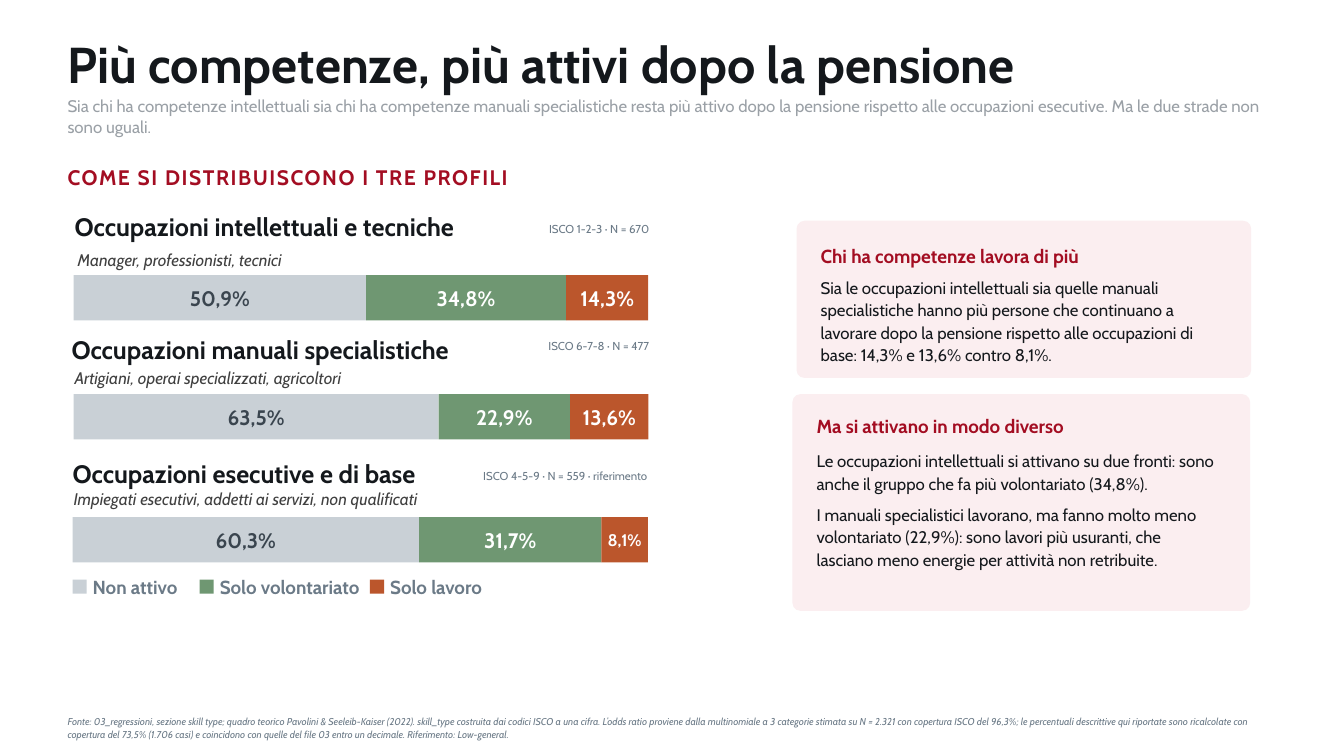
from dataclasses import dataclass
from itertools import accumulate

from pptx import Presentation
from pptx.dml.color import RGBColor
from pptx.enum.shapes import MSO_SHAPE
from pptx.enum.text import MSO_ANCHOR, MSO_AUTO_SIZE, PP_ALIGN
from pptx.util import Inches, Pt

TITLE = "Più competenze, più attivi dopo la pensione"
SUBTITLE = (
    "Sia chi ha competenze intellettuali sia chi ha competenze manuali specialistiche resta più attivo "
    "dopo la pensione rispetto alle occupazioni esecutive. Ma le due strade non sono uguali."
)
SECTION = "COME SI DISTRIBUISCONO I TRE PROFILI"
SOURCE = (
    "Fonte: 03_regressioni, sezione skill type; quadro teorico Pavolini & Seeleib-Kaiser (2022). "
    "skill_type costruita dai codici ISCO a una cifra. L’odds ratio proviene dalla multinomiale a 3 "
    "categorie stimata su N = 2.321 con copertura ISCO del 96,3%; le percentuali descrittive qui riportate "
    "sono ricalcolate con copertura del 73,5% (1.706 casi) e coincidono con quelle del file 03 entro un "
    "decimale. Riferimento: Low-general."
)
PROFILES = [
    {"name": "Occupazioni intellettuali e tecniche", "name_at": (0.74, 2.14),
     "sample": "ISCO 1-2-3 · N = 670", "sample_at": (3.29, 2.17),
     "jobs": "Manager, professionisti, tecnici", "jobs_at": (0.77, 2.49),
     "shares": (50.9, 34.8, 14.3), "bar_at": (0.73, 2.73)},
    {"name": "Occupazioni manuali specialistiche", "name_at": (0.71, 3.36),
     "sample": "ISCO 6-7-8 · N = 477", "sample_at": (3.29, 3.33),
     "jobs": "Artigiani, operai specializzati, agricoltori", "jobs_at": (0.74, 3.66),
     "shares": (63.5, 22.9, 13.6), "bar_at": (0.73, 3.91)},
    {"name": "Occupazioni esecutive e di base", "name_at": (0.72, 4.59),
     "sample": "ISCO 4-5-9 · N = 559 · riferimento", "sample_at": (3.27, 4.62),
     "jobs": "Impiegati esecutivi, addetti ai servizi, non qualificati", "jobs_at": (0.73, 4.86),
     "shares": (60.3, 31.7, 8.1), "bar_at": (0.72, 5.13)},
]
LEGEND = [("Non attivo", 0.72), ("Solo volontariato", 1.98), ("Solo lavoro", 3.67)]
FINDINGS = [
    {"heading": "Chi ha competenze lavora di più", "card": (7.9, 2.19, 4.51, 1.56),
     "heading_box": (8.14, 2.36, 3.94, 0.36), "body_box": (8.14, 2.73, 3.94, 0.76),
     "body": ["Sia le occupazioni intellettuali sia quelle manuali specialistiche hanno più persone che "
              "continuano a lavorare dopo la pensione rispetto alle occupazioni di base: 14,3% e 13,6% "
              "contro 8,1%."]},
    {"heading": "Ma si attivano in modo diverso", "card": (7.86, 3.91, 4.54, 2.15),
     "heading_box": (8.1, 4.07, 3.97, 0.32), "body_box": (8.1, 4.45, 3.97, 1.44),
     "body": ["Le occupazioni intellettuali si attivano su due fronti: sono anche il gruppo che fa più "
              "volontariato (34,8%).",
              "I manuali specialistici lavorano, ma fanno molto meno volontariato (22,9%): sono lavori più "
              "usuranti, che lasciano meno energie per attività non retribuite."]},
]
BAR_WIDTH, BAR_HEIGHT, NARROW_SHARE = 5.7, 0.45, 10
CARD_RADIUS = 0.08


@dataclass(frozen=True)
class Theme:
    """Typeface, colours and type sizes of the slide."""
    font: str = "Cabin"
    ink: str = "14181C"
    pale: str = "9AA0A6"
    accent: str = "A30D22"
    muted: str = "6B7A87"
    soft: str = "404040"
    card: str = "FBEEF0"
    series: tuple = ("C9D0D6", "6F9772", "BB562C")
    series_text: tuple = ("3A454F", "FFFFFF", "FFFFFF")
    title: float = 36
    name: float = 18
    section: float = 15
    heading: float = 13.5
    body: float = 12
    sample: float = 8.2
    source: float = 7.1


THEME = Theme()


def write(holder, paragraphs, size, color, bold=False, italic=False, align=PP_ALIGN.LEFT,
          anchor=MSO_ANCHOR.MIDDLE, wrap=True, leading=None, gap=0, tracking=0):
    """Fill a shape with uniformly styled paragraphs."""
    frame = holder.text_frame
    frame.margin_left = frame.margin_right = frame.margin_top = frame.margin_bottom = 0
    frame.auto_size = MSO_AUTO_SIZE.NONE
    frame.word_wrap = wrap
    frame.vertical_anchor = anchor
    for index, wording in enumerate(paragraphs):
        paragraph = frame.add_paragraph() if index else frame.paragraphs[0]
        paragraph.alignment = align
        if leading:
            paragraph.line_spacing = leading
        if index < len(paragraphs) - 1:
            paragraph.space_after = Pt(gap)
        run = paragraph.add_run()
        run.text = wording
        run.font.name = THEME.font
        run.font.size = Pt(size)
        run.font.bold = bold
        run.font.italic = italic
        run.font.color.rgb = RGBColor.from_string(color)
        if tracking:
            run.font._element.set("spc", str(round(tracking * 100)))


def add_text(slide, box, paragraphs, size, color, **style):
    """Add a text box."""
    write(slide.shapes.add_textbox(*map(Inches, box)), paragraphs, size, color, **style)


def add_block(slide, box, color, preset=MSO_SHAPE.RECTANGLE):
    """Add a flat filled shape."""
    block = slide.shapes.add_shape(preset, *map(Inches, box))
    block.shadow.inherit = False
    block.fill.solid()
    block.fill.fore_color.rgb = RGBColor.from_string(color)
    block.line.fill.background()
    return block


def add_profile(slide, profile):
    """Add one occupation group with its stacked bar."""
    add_text(slide, (*profile["name_at"], 2.66, 0.22), [profile["name"]], THEME.name, THEME.ink,
             bold=True, wrap=False)
    add_text(slide, (*profile["sample_at"], 3.15, 0.21), [profile["sample"]], THEME.sample, THEME.muted,
             align=PP_ALIGN.RIGHT)
    add_text(slide, (*profile["jobs_at"], 4.76, 0.18), [profile["jobs"]], THEME.body, THEME.soft, italic=True)
    left, top = profile["bar_at"]
    shares = profile["shares"]
    starts = accumulate(shares[:-1], initial=0)
    for share, start, fill, color in zip(shares, starts, THEME.series, THEME.series_text):
        box = (left + BAR_WIDTH * start / 100, top, BAR_WIDTH * share / 100, BAR_HEIGHT)
        size = THEME.body if share < NARROW_SHARE else THEME.section
        write(add_block(slide, box, fill), [f"{share}%".replace(".", ",")], size, color, bold=True,
              align=PP_ALIGN.CENTER, wrap=False)


def add_finding(slide, finding):
    """Add one card with a heading and its explanation."""
    card = add_block(slide, finding["card"], THEME.card, MSO_SHAPE.ROUNDED_RECTANGLE)
    card.adjustments[0] = CARD_RADIUS / min(finding["card"][2:])
    add_text(slide, finding["heading_box"], [finding["heading"]], THEME.heading, THEME.accent, bold=True)
    add_text(slide, finding["body_box"], finding["body"], THEME.body, THEME.ink,
             anchor=MSO_ANCHOR.TOP, leading=1.12, gap=6)


def main():
    """Build and save the slide."""
    deck = Presentation()
    deck.slide_width, deck.slide_height = Inches(13.33), Inches(7.5)
    slide = deck.slides.add_slide(deck.slide_layouts[5])
    title = slide.shapes.title
    title.left, title.top, title.width, title.height = map(Inches, (0.67, 0.36, 12, 0.54))
    write(title, [TITLE], THEME.title, THEME.ink, bold=True)
    add_text(slide, (0.67, 0.98, 12, 0.34), [SUBTITLE], THEME.body, THEME.pale, leading=1.05)
    add_text(slide, (0.67, 1.53, 9.49, 0.45), [SECTION], THEME.section, THEME.accent, bold=True, tracking=1.1)
    for profile in PROFILES:
        add_profile(slide, profile)
    for (label, left), fill in zip(LEGEND, THEME.series):
        add_block(slide, (left, 5.75, 0.14, 0.14), fill)
        add_text(slide, (left + 0.2, 5.71, 1.8, 0.22), [label], THEME.heading, THEME.muted,
                 bold=True, wrap=False)
    for finding in FINDINGS:
        add_finding(slide, finding)
    add_text(slide, (0.67, 7.05, 12, 0.34), [SOURCE], THEME.source, THEME.muted, italic=True, leading=Pt(9))
    deck.save("out.pptx")


if __name__ == "__main__":
    main()
